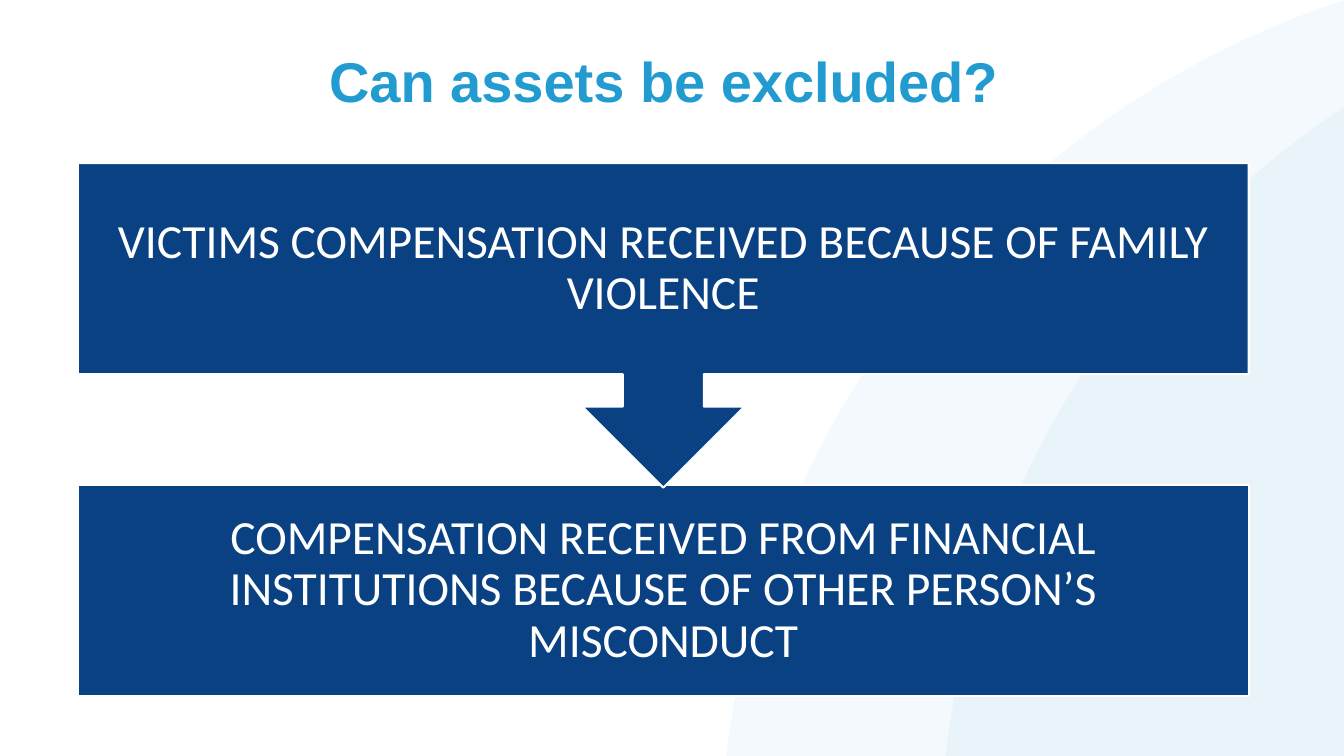
"""Builds a slide on excluded assets: two linked bands under a title."""
from lxml import etree
from pptx import Presentation
from pptx.dml.color import RGBColor
from pptx.enum.shapes import MSO_SHAPE
from pptx.enum.text import MSO_ANCHOR, PP_ALIGN
from pptx.oxml.ns import qn
from pptx.util import Cm, Pt

ELLIPSE, RECTANGLE = MSO_SHAPE.OVAL, MSO_SHAPE.RECTANGLE
CALLOUT = MSO_SHAPE.UP_ARROW_CALLOUT
TOP, MIDDLE, CENTER = MSO_ANCHOR.TOP, MSO_ANCHOR.MIDDLE, PP_ALIGN.CENTER

TITLE = "Can assets be excluded?"
EXCLUSIONS = [
    "VICTIMS COMPENSATION RECEIVED BECAUSE OF FAMILY VIOLENCE",
    "COMPENSATION RECEIVED FROM FINANCIAL INSTITUTIONS BECAUSE OF OTHER PERSON’S MISCONDUCT",
]
SKY, NAVY, WHITE = "229CD0", "094183", "FFFFFF"
SLIDE_W, SLIDE_H = 33.87, 19.05
LEFT, WIDTH = 1.96, 29.51
TITLE_TOP, TITLE_H = 1.24, 2.46
BAND_TOP, BAND_H, BAND_STEP = 4.11, 5.31, 8.11
CALLOUT_H = 8.18
CIRCLE_LEFTS, CIRCLE_TOP, CIRCLE_SIZE = (18.14, 23.67), -1.14, 45.77


def rgb(code):
    return RGBColor.from_string(code)


def add_figure(slide, kind, left, top, width, height, fill, line=None, opacity=None):
    figure = slide.shapes.add_shape(kind, Cm(left), Cm(top), Cm(width), Cm(height))
    figure.shadow.inherit = False
    figure.fill.solid()
    figure.fill.fore_color.rgb = rgb(fill)
    if line:
        figure.line.color.rgb = rgb(line)
        figure.line.width = Pt(1.5)
    else:
        figure.line.fill.background()
    if opacity:
        color = figure.fill._xPr.find(".//" + qn("a:srgbClr"))
        etree.SubElement(color, qn("a:alpha"), val=str(opacity * 1000))
    return figure


def add_text(slide, text, *, top, height, font, size, color,
             bold=False, anchor=MIDDLE, inset_x=0.66, inset_y=0.66):
    box = slide.shapes.add_textbox(Cm(LEFT), Cm(top), Cm(WIDTH), Cm(height))
    frame = box.text_frame
    frame.word_wrap = True
    frame.vertical_anchor = anchor
    frame.margin_left = frame.margin_right = Cm(inset_x)
    frame.margin_top = frame.margin_bottom = Cm(inset_y)
    paragraph = frame.paragraphs[0]
    paragraph.alignment = CENTER
    paragraph.line_spacing = 0.9
    run = paragraph.add_run()
    run.text = text
    run.font.name, run.font.size, run.font.bold = font, Pt(size), bold
    run.font.color.rgb = rgb(color)


def main():
    deck = Presentation()
    deck.slide_width, deck.slide_height = Cm(SLIDE_W), Cm(SLIDE_H)
    slide = deck.slides.add_slide(deck.slide_layouts[6])

    for circle_left in CIRCLE_LEFTS:
        add_figure(slide, ELLIPSE, circle_left, CIRCLE_TOP, CIRCLE_SIZE, CIRCLE_SIZE,
                   SKY, opacity=5)
    add_text(slide, TITLE, top=TITLE_TOP, height=TITLE_H, font="Arial", size=40,
             color=SKY, bold=True, anchor=TOP, inset_x=0.25, inset_y=0.13)

    last = len(EXCLUSIONS) - 1
    for index, exclusion in reversed(list(enumerate(EXCLUSIONS))):
        top = BAND_TOP + index * BAND_STEP
        if index == last:
            add_figure(slide, RECTANGLE, LEFT, top, WIDTH, BAND_H, NAVY, line=WHITE)
        else:
            callout = add_figure(slide, CALLOUT, LEFT, top, WIDTH, CALLOUT_H, NAVY, line=WHITE)
            callout.rotation = 180
        add_text(slide, exclusion, top=top, height=BAND_H, font="Calibri", size=34,
                 color=WHITE)

    deck.save("out.pptx")


if __name__ == "__main__":
    main()
